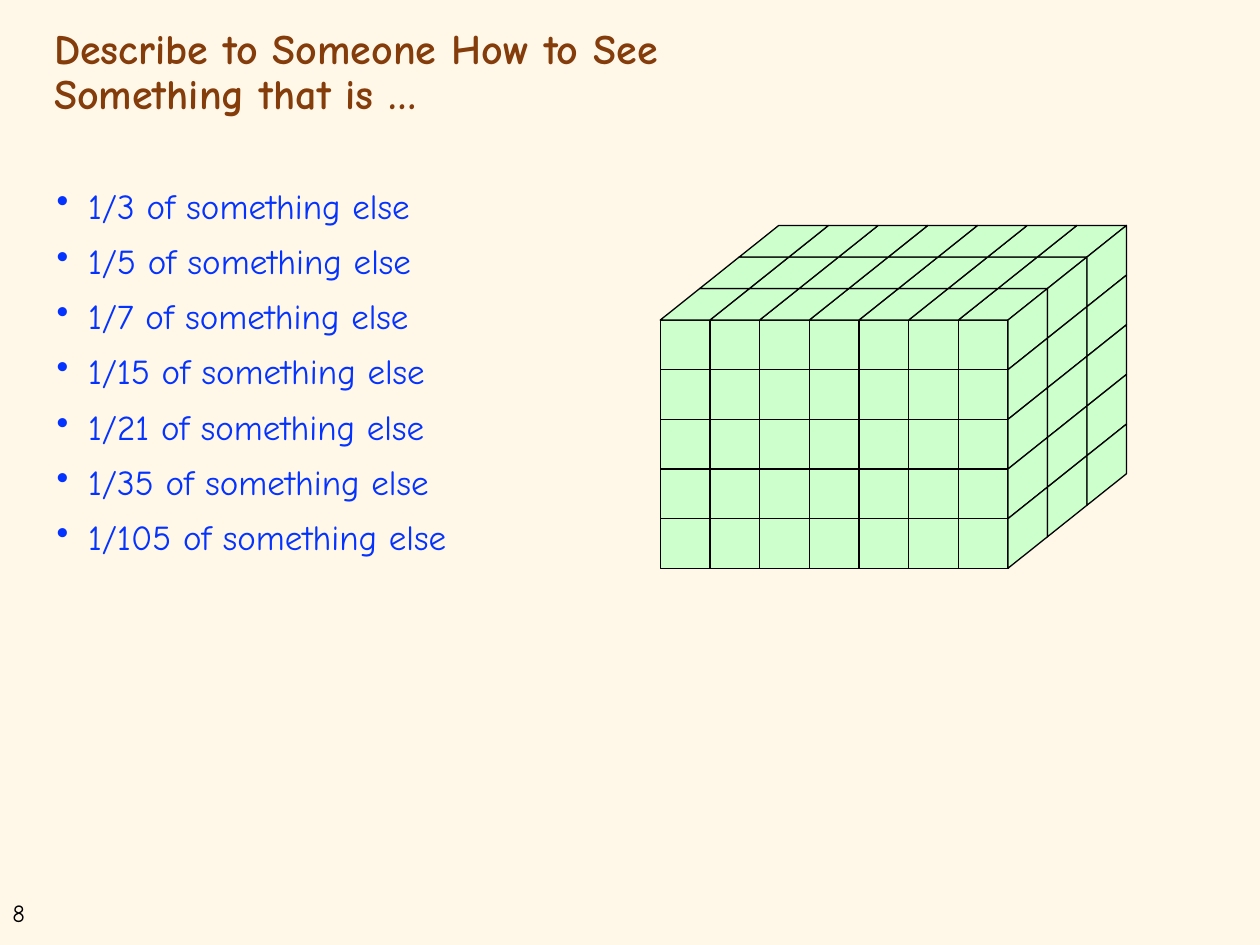
from dataclasses import dataclass

from lxml import etree
from pptx import Presentation
from pptx.dml.color import RGBColor
from pptx.enum.shapes import MSO_SHAPE
from pptx.enum.text import MSO_ANCHOR, MSO_AUTO_SIZE, PP_ALIGN
from pptx.oxml.ns import qn
from pptx.util import Inches, Pt

SQUARE = MSO_SHAPE.RECTANGLE
SLANTED = MSO_SHAPE.PARALLELOGRAM
TOP = MSO_ANCHOR.TOP
LEFT = PP_ALIGN.LEFT
NO_AUTOFIT = MSO_AUTO_SIZE.NONE

SLIDE_WIDTH, SLIDE_HEIGHT = Inches(10), Inches(7.5)
TITLE_ONLY = 5
COLUMNS, ROWS, LAYERS = 7, 5, 3
FRACTIONS = [3, 5, 7, 15, 21, 35, 105]


@dataclass(frozen=True)
class Theme:
    font: str = "Comic Neue"
    background: str = "FFF8E9"
    title: str = "843C0B"
    body: str = "0432FF"
    ink: str = "000000"
    cube: str = "CCFFCC"
    title_size: int = 24
    body_size: int = 20
    number_size: int = 14
    outline: float = 0.75


THEME = Theme()


def across(percent):
    return round(SLIDE_WIDTH * percent / 100)


def down(percent):
    return round(SLIDE_HEIGHT * percent / 100)


def area(left, top, width, height):
    return across(left), down(top), across(width), down(height)


def color(code):
    return RGBColor.from_string(code)


def write(frame, text, size, ink, bold=False, line_spacing=1.0):
    frame.word_wrap = True
    frame.auto_size = NO_AUTOFIT
    frame.vertical_anchor = TOP
    frame.text = text
    for paragraph in frame.paragraphs:
        paragraph.alignment = LEFT
        paragraph.line_spacing = line_spacing
        paragraph.space_before = Pt(0)
        for run in paragraph.runs:
            run.font.name = THEME.font
            run.font.size = Pt(size)
            run.font.bold = bold
            run.font.color.rgb = color(ink)


def add_title(slide):
    title = slide.shapes.title
    title.left, title.top, title.width, title.height = area(3.3, 2.27, 85, 15.2)
    write(title.text_frame, "Describe to Someone How to See\vSomething that is …",
          THEME.title_size, THEME.title, bold=True, line_spacing=0.9)


def add_fraction_list(slide):
    frame = slide.shapes.add_textbox(*area(3.5, 19.33, 47.2, 60)).text_frame
    lines = [f"1/{parts} of something else" for parts in FRACTIONS]
    write(frame, "\n".join(lines), THEME.body_size, THEME.body, line_spacing=0.9)
    for paragraph in frame.paragraphs:
        paragraph.space_before = Pt(10)
        properties = paragraph._p.get_or_add_pPr()
        properties.set("marL", str(Inches(0.25)))
        properties.set("indent", str(-Inches(0.25)))
        etree.SubElement(properties, qn("a:buChar")).set("char", "•")


def add_slide_number(slide):
    frame = slide.shapes.add_textbox(*area(0, 94.4, 5.3, 4.53)).text_frame
    write(frame, "8", THEME.number_size, THEME.ink)


def add_face(group, kind, left, top, width, height, slant=None):
    face = group.shapes.add_shape(
        kind, round(left), round(top), round(width), round(height))
    face.shadow.inherit = False
    face.fill.solid()
    face.fill.fore_color.rgb = color(THEME.cube)
    face.line.color.rgb = color(THEME.ink)
    face.line.width = Pt(THEME.outline)
    if slant is not None:
        face.adjustments[0] = slant
    return face


def add_side_face(group, left, top, width, height, slant):
    face = add_face(group, SLANTED, left + (width - height) / 2,
                    top + (height - width) / 2, height, width, slant)
    face.rotation = 270
    face._element.spPr.find(qn("a:xfrm")).set("flipV", "1")


def add_block(slide):
    left, top, width, height = area(52.4, 33.87, 27.6, 26.27)
    cell_width, cell_height = width / COLUMNS, height / ROWS
    run, rise = across(9.4) / LAYERS, down(10) / LAYERS

    front = slide.shapes.add_group_shape()
    for row in reversed(range(ROWS)):
        for column in range(COLUMNS):
            add_face(front, SQUARE, left + column * cell_width,
                     top + row * cell_height, cell_width, cell_height)

    for layer in range(LAYERS):
        lid = slide.shapes.add_group_shape()
        for column in reversed(range(COLUMNS)):
            add_face(lid, SLANTED, left + column * cell_width + layer * run,
                     top - (layer + 1) * rise, cell_width + run, rise, run / rise)

    for row in range(ROWS):
        side = slide.shapes.add_group_shape()
        for layer in range(LAYERS):
            add_side_face(side, left + width + layer * run,
                          top + row * cell_height - (layer + 1) * rise,
                          run, cell_height + rise, rise / run)


def main():
    presentation = Presentation()
    presentation.slide_width = SLIDE_WIDTH
    presentation.slide_height = SLIDE_HEIGHT
    slide = presentation.slides.add_slide(presentation.slide_layouts[TITLE_ONLY])
    slide.background.fill.solid()
    slide.background.fill.fore_color.rgb = color(THEME.background)
    add_slide_number(slide)
    add_title(slide)
    add_fraction_list(slide)
    add_block(slide)
    presentation.save("out.pptx")


if __name__ == "__main__":
    main()
